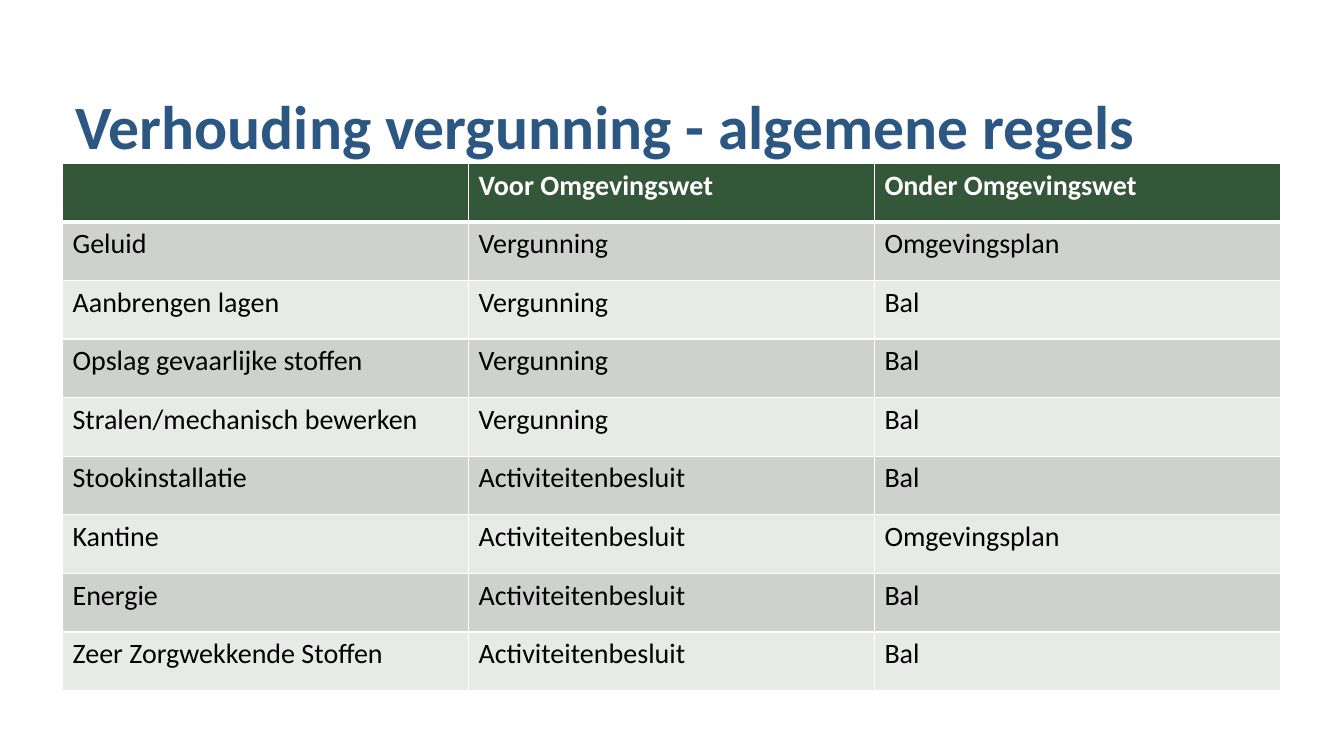
from dataclasses import dataclass

from lxml.etree import SubElement
from pptx import Presentation
from pptx.dml.color import RGBColor as Color
from pptx.enum.text import MSO_ANCHOR as Anchor, PP_ALIGN as Align
from pptx.oxml.ns import qn
from pptx.util import Inches, Pt


@dataclass(frozen=True)
class Theme:
    font: str = "Calibri"
    title_size: int = 44
    table_size: int = 20
    title: str = "2B5782"
    header: str = "34573A"
    header_text: str = "FFFFFF"
    body_text: str = "000000"
    bands: tuple = ("CED1CE", "E8EAE8")
    border: str = "FFFFFF"
    thin: int = 1
    thick: int = 3


class SlideBuilder:
    def __init__(self, slide, theme):
        self.slide = slide
        self.theme = theme

    def style(self, para, size, color, bold):
        for span in para.runs:
            span.font.name = self.theme.font
            span.font.size = Pt(size)
            span.font.bold = bold
            span.font.color.rgb = Color.from_string(color)

    def title(self, text, left, top, width, height):
        box = self.slide.shapes.title
        box.left, box.top = Inches(left), Inches(top)
        box.width, box.height = Inches(width), Inches(height)
        frame = box.text_frame
        frame.text = text
        frame.word_wrap = True
        frame.vertical_anchor = Anchor.BOTTOM
        para = frame.paragraphs[0]
        para.alignment = Align.LEFT
        para.line_spacing = 0.9
        self.style(para, self.theme.title_size, self.theme.title, True)

    def borders(self, cell, widths):
        properties = cell._tc.get_or_add_tcPr()
        for side, width in widths.items():
            line = SubElement(properties, qn(f"a:ln{side}"), w=str(Pt(width)))
            fill = SubElement(line, qn("a:solidFill"))
            SubElement(fill, qn("a:srgbClr"), val=self.theme.border)

    def table(self, rows, left, top, width, height):
        theme = self.theme
        table = self.slide.shapes.add_table(
            len(rows), len(rows[0]), Inches(left), Inches(top), Inches(width), Inches(height)
        ).table
        for row_index, texts in enumerate(rows):
            is_header = row_index == 0
            fill = theme.header if is_header else theme.bands[(row_index - 1) % 2]
            color = theme.header_text if is_header else theme.body_text
            widths = {
                "L": theme.thin,
                "R": theme.thin,
                "T": theme.thick if row_index == 1 else theme.thin,
                "B": theme.thick if is_header else theme.thin,
            }
            for column_index, text in enumerate(texts):
                cell = table.cell(row_index, column_index)
                self.borders(cell, widths)
                cell.fill.solid()
                cell.fill.fore_color.rgb = Color.from_string(fill)
                if text:
                    cell.text_frame.text = text
                    self.style(cell.text_frame.paragraphs[0], theme.table_size, color, is_header)


ROWS = [
    ("", "Voor Omgevingswet", "Onder Omgevingswet"),
    ("Geluid", "Vergunning", "Omgevingsplan"),
    ("Aanbrengen lagen", "Vergunning", "Bal"),
    ("Opslag gevaarlijke stoffen", "Vergunning", "Bal"),
    ("Stralen/mechanisch bewerken", "Vergunning", "Bal"),
    ("Stookinstallatie", "Activiteitenbesluit", "Bal"),
    ("Kantine", "Activiteitenbesluit", "Omgevingsplan"),
    ("Energie", "Activiteitenbesluit", "Bal"),
    ("Zeer Zorgwekkende Stoffen", "Activiteitenbesluit", "Bal"),
]


def main():
    deck = Presentation()
    deck.slide_width, deck.slide_height = Inches(13.33), Inches(7.5)
    page = SlideBuilder(deck.slides.add_slide(deck.slide_layouts[5]), Theme())
    page.title("Verhouding vergunning - algemene regels", 0.65, 0.69, 11.5, 0.98)
    page.table(ROWS, 0.62, 1.62, 12.08, 5.23)
    deck.save("out.pptx")


if __name__ == "__main__":
    main()
